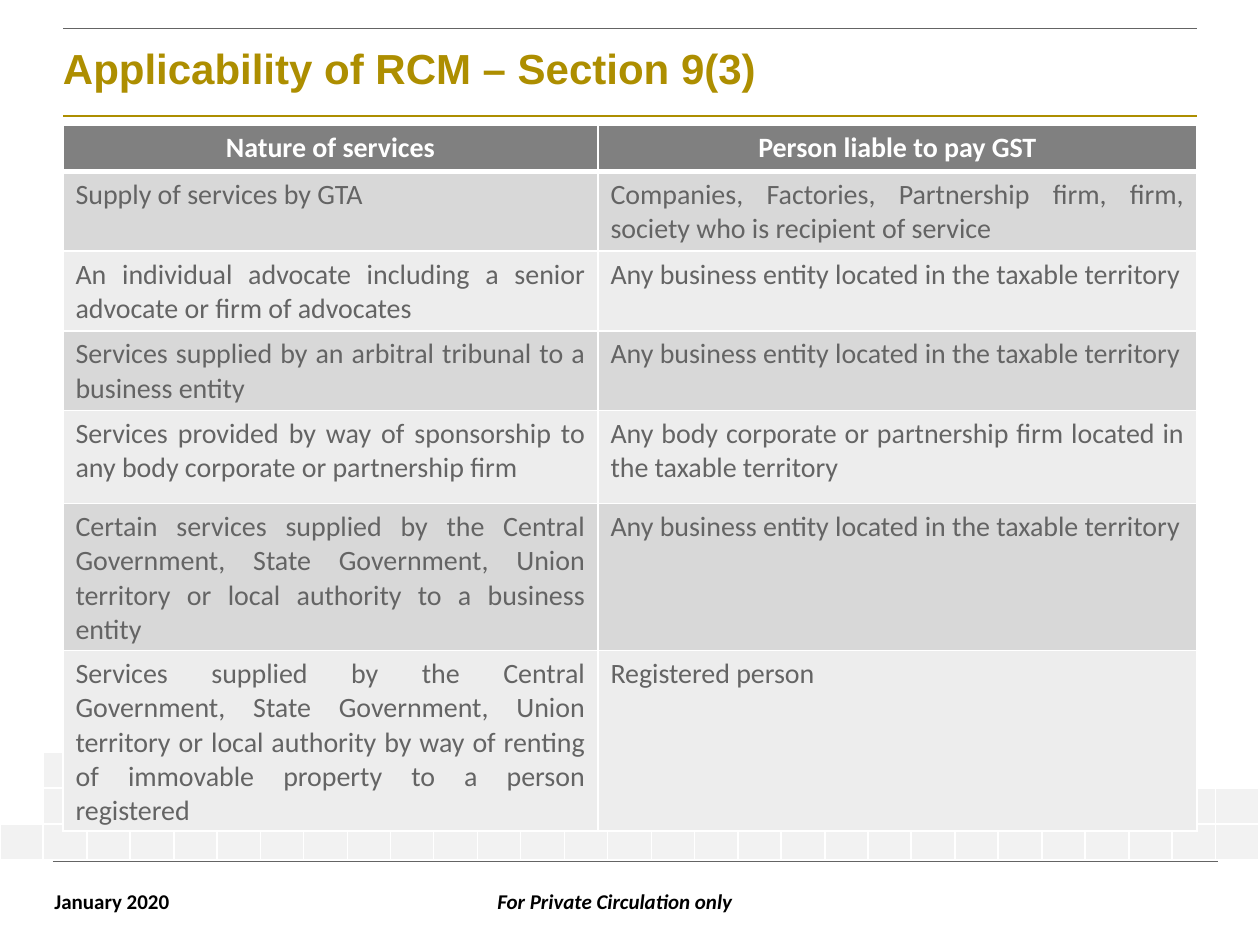
from lxml import etree
from pptx import Presentation
from pptx.dml.color import RGBColor
from pptx.enum.shapes import MSO_CONNECTOR
from pptx.enum.text import MSO_ANCHOR, MSO_AUTO_SIZE, PP_ALIGN
from pptx.oxml.ns import qn
from pptx.util import Emu, Pt

PX = 914400 / 126
GOLD, GREY, WHITE, BLACK = "AD8E00", "646464", "FFFFFF", "000000"
HEADER_FILL, BAND_FILLS, TILE_FILL = "808080", ("D8D8D8", "EDEDED"), "F2F2F2"

# One character per tile, "#" for a filled one
TILES = (
    ".#.#....#.#.#.#....#.#.#.#...",
    ".###.##.###.###.##.###.###.##",
    "#" * 29,
)
ANY_ENTITY = "Any business entity located in the taxable territory"
SERVICES = (
    ("Nature of services", "Person liable to pay GST"),
    ("Supply of services by GTA",
     "Companies, Factories, Partnership firm, firm, society who is recipient of service"),
    ("An individual advocate including a senior advocate or firm of advocates", ANY_ENTITY),
    ("Services supplied by an arbitral tribunal to a business entity", ANY_ENTITY),
    ("Services provided by way of sponsorship to any body corporate or partnership firm",
     "Any body corporate or partnership firm located in the taxable territory"),
    ("Certain services supplied by the Central Government, State Government, "
     "Union territory or local authority to a business entity", ANY_ENTITY),
    ("Services supplied by the Central Government, State Government, Union territory or "
     "local authority by way of renting of immovable property to a person registered",
     "Registered person"),
)


def px(n):
    return Emu(round(n * PX))


def rgb(color):
    return RGBColor.from_string(color)


def add_run(p, text, size, color, font="Calibri", bold=False, italic=False):
    r = p.add_run()
    r.text = text
    r.font.name, r.font.size = font, Pt(size)
    r.font.bold, r.font.italic = bold, italic
    r.font.color.rgb = rgb(color)


def add_line(slide, x1, x2, y, color, width):
    line = slide.shapes.add_connector(MSO_CONNECTOR.STRAIGHT, px(x1), px(y), px(x2), px(y))
    line.line.color.rgb = rgb(color)
    line.line.width = Pt(width)
    etree.SubElement(line._element.spPr, qn("a:effectLst"))


def add_title(slide, text):
    tf = slide.shapes.add_textbox(px(63), px(28), px(1134), px(83)).text_frame
    tf.word_wrap = True
    tf.vertical_anchor = MSO_ANCHOR.MIDDLE
    tf.margin_left = tf.margin_right = tf.margin_bottom = 0
    tf.margin_top = px(5)
    p = tf.paragraphs[0]
    p.line_spacing = 0.85
    add_run(p, text, 24, GOLD, "Arial", bold=True)


def add_footer(slide, x, w, text, align=PP_ALIGN.LEFT, wrap=True, italic=False):
    tf = slide.shapes.add_textbox(px(x), px(882), px(w), px(38)).text_frame
    tf.word_wrap = wrap
    tf.auto_size = MSO_AUTO_SIZE.SHAPE_TO_FIT_TEXT
    p = tf.paragraphs[0]
    p.alignment = align
    add_run(p, text, 12, BLACK, bold=True, italic=italic)


def add_grid(slide, x, y, widths, heights):
    """Add a table with the given column widths and row heights."""
    table = slide.shapes.add_table(len(heights), len(widths), px(x), px(y),
                                   px(sum(widths)), px(sum(heights))).table
    table.horz_banding = False
    for col, w in zip(table.columns, widths):
        col.width = px(w)
    for row, h in zip(table.rows, heights):
        row.height = px(h)
    return table


def style_cell(cell, fill=None, top=1, bottom=1):
    """Set white borders (widths in points) and the fill of a cell."""
    tcPr = cell._tc.get_or_add_tcPr()
    for side, width in (("L", 1), ("R", 1), ("T", top), ("B", bottom)):
        ln = etree.SubElement(tcPr, qn(f"a:ln{side}"), w=str(Pt(width)))
        solid = etree.SubElement(ln, qn("a:solidFill"))
        etree.SubElement(solid, qn("a:srgbClr"), val=WHITE)
    if fill:
        cell.fill.solid()
        cell.fill.fore_color.rgb = rgb(fill)
    else:
        cell.fill.background()


def add_tiles(slide):
    count = len(TILES[0])
    edges = [round(1260 * i / count) for i in range(count + 1)]
    widths = [b - a for a, b in zip(edges, edges[1:])]
    table = add_grid(slide, 0, 752, widths, [36] * len(TILES))
    table.first_row = False
    for i, row in enumerate(TILES):
        for j, mark in enumerate(row):
            cell = table.cell(i, j)
            style_cell(cell, TILE_FILL if mark == "#" else None)
            cell.margin_top = cell.margin_bottom = 0
            # Small type keeps the empty rows from growing
            etree.SubElement(cell.text_frame.paragraphs[0]._p, qn("a:endParaRPr"), sz="800")


def add_services(slide):
    table = add_grid(slide, 63, 125, (535, 599), (44, 76, 76, 76, 93, 140, 171))
    for i, row in enumerate(SERVICES):
        header = i == 0
        for j, text in enumerate(row):
            cell = table.cell(i, j)
            style_cell(cell, HEADER_FILL if header else BAND_FILLS[(i - 1) % 2],
                       top=3 if i == 1 else 1, bottom=3 if header else 1)
            p = cell.text_frame.paragraphs[0]
            p.alignment = PP_ALIGN.CENTER if header else PP_ALIGN.JUSTIFY
            add_run(p, text, 16, WHITE if header else GREY, bold=header)


def main():
    prs = Presentation()
    prs.slide_width, prs.slide_height = px(1260), px(945)
    slide = prs.slides.add_slide(prs.slide_layouts[6])
    add_tiles(slide)
    add_line(slide, 63, 1197, 116, GOLD, 1.5)
    add_line(slide, 63, 1197, 28, GREY, 0.5)
    add_line(slide, 53, 1218, 861, GREY, 0.25)
    add_footer(slide, 42, 142, "January 2020", wrap=False)
    add_footer(slide, 305, 620, "For Private Circulation only", PP_ALIGN.CENTER, italic=True)
    add_title(slide, "Applicability of RCM – Section 9(3)")
    add_services(slide)
    prs.save("out.pptx")


if __name__ == "__main__":
    main()
